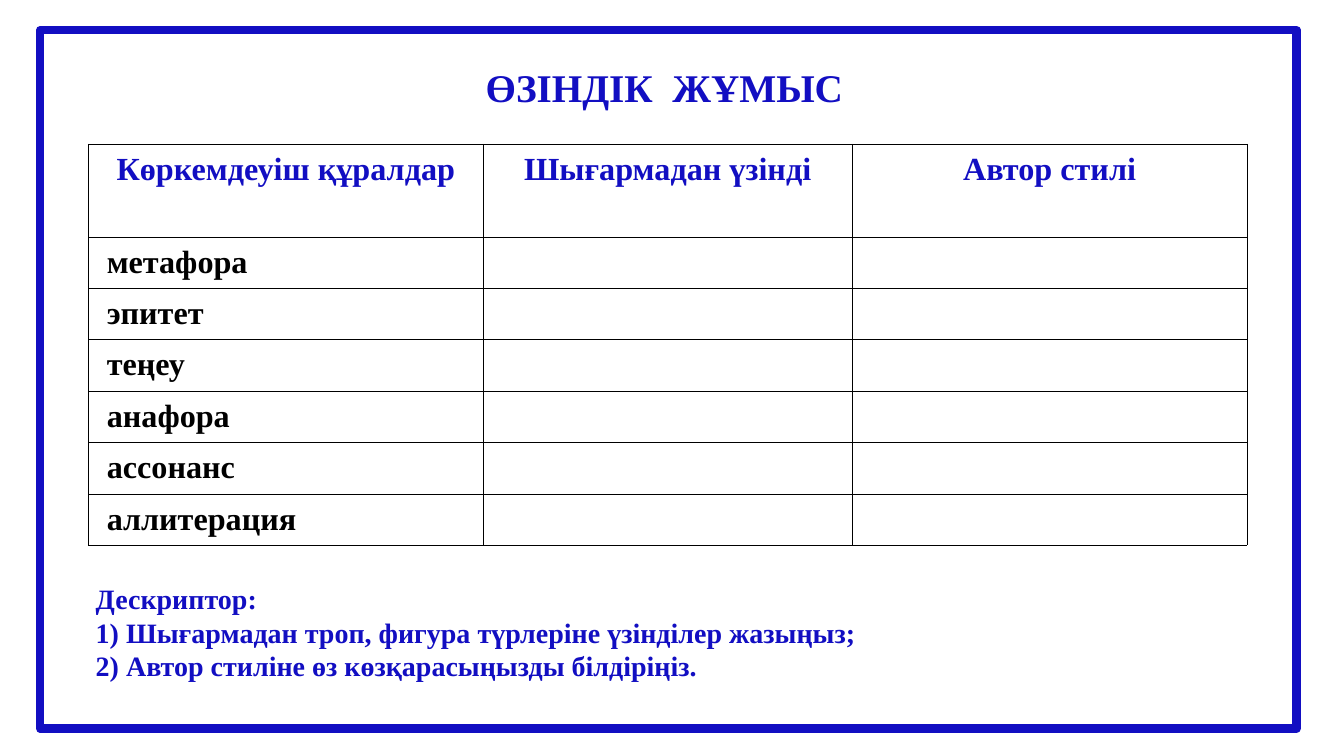
from dataclasses import dataclass

from lxml import etree
from pptx import Presentation
from pptx import util as u
from pptx.dml.color import RGBColor
from pptx.enum import shapes, text
from pptx.oxml import ns


@dataclass(frozen=True)
class Theme:
    """Hold the colours and type sizes of the slide."""
    font: str = "Times New Roman"
    blue: str = "120EC2"
    black: str = "000000"
    title: int = 28
    table: int = 23
    body: int = 20
    frame_line: float = 6
    grid_line: float = 0.45


THEME = Theme()
HEADERS = ["Көркемдеуіш құралдар", "Шығармадан үзінді", "Автор стилі"]
DEVICES = ["метафора", "эпитет", "теңеу", "анафора", "ассонанс", "аллитерация"]
COLUMN_WIDTHS = [3.92, 3.66, 3.92]
HEADER_HEIGHT, ROW_HEIGHT = 0.92, 0.51
DESCRIPTOR = [
    "Дескриптор:",
    "1) Шығармадан троп, фигура түрлеріне үзінділер жазыңыз;",
    "2) Автор стиліне өз көзқарасыңызды білдіріңіз.",
]


def format_paragraph(paragraph, size, color, alignment=text.PP_ALIGN.LEFT, spacing=1.0):
    """Apply alignment, spacing and the bold theme font to a paragraph."""
    paragraph.alignment = alignment
    paragraph.line_spacing = spacing
    paragraph.space_before = paragraph.space_after = u.Pt(0)
    for run in paragraph.runs:
        run.font.name = THEME.font
        run.font.size = u.Pt(size)
        run.font.bold = True
        run.font.color.rgb = RGBColor.from_string(color)


def place(shape, box):
    """Move a shape to a box of left, top, width and height in inches."""
    shape.left, shape.top, shape.width, shape.height = map(u.Inches, box)


def add_title(slide, box):
    """Fill the title placeholder."""
    title = slide.shapes.title
    place(title, box)
    frame = title.text_frame
    frame.text = "ӨЗІНДІК  ЖҰМЫС"
    frame.word_wrap = False
    frame.auto_size = text.MSO_AUTO_SIZE.NONE
    frame.vertical_anchor = text.MSO_ANCHOR.MIDDLE
    format_paragraph(frame.paragraphs[0], THEME.title, THEME.blue, spacing=0.9)


def add_descriptor(slide, box):
    """Fill the body placeholder with the unbulleted descriptor lines."""
    body = slide.placeholders[1]
    place(body, box)
    frame = body.text_frame
    frame.text = "\n".join(DESCRIPTOR)
    frame.word_wrap = True
    frame.auto_size = text.MSO_AUTO_SIZE.NONE
    frame.vertical_anchor = text.MSO_ANCHOR.TOP
    for paragraph in frame.paragraphs:
        format_paragraph(paragraph, THEME.body, THEME.blue)
        properties = paragraph._p.get_or_add_pPr()
        properties.set("marL", "0")
        properties.set("indent", "0")
        etree.SubElement(properties, ns.qn("a:buNone"))


def add_frame(slide, box):
    """Draw the blue border around the slide."""
    frame = slide.shapes.add_shape(shapes.MSO_SHAPE.RECTANGLE, *map(u.Inches, box))
    frame.shadow.inherit = False
    frame.fill.background()
    frame.line.color.rgb = RGBColor.from_string(THEME.blue)
    frame.line.width = u.Pt(THEME.frame_line)


def style_cell(cell):
    """Give a cell thin borders on all sides and no fill."""
    properties = cell._tc.get_or_add_tcPr()
    for side in ("lnL", "lnR", "lnT", "lnB"):
        line = etree.SubElement(properties, ns.qn(f"a:{side}"), w=str(u.Pt(THEME.grid_line)))
        fill = etree.SubElement(line, ns.qn("a:solidFill"))
        etree.SubElement(fill, ns.qn("a:srgbClr"), val=THEME.black)
    cell.fill.background()


def add_devices_table(slide, box):
    """Build the table of literary devices with two columns left to fill in."""
    rows = [HEADERS] + [[device, "", ""] for device in DEVICES]
    table = slide.shapes.add_table(len(rows), len(HEADERS), *map(u.Inches, box)).table
    table.horz_banding = False
    for column, width in zip(table.columns, COLUMN_WIDTHS):
        column.width = u.Inches(width)
    for row_index, values in enumerate(rows):
        header = row_index == 0
        table.rows[row_index].height = u.Inches(HEADER_HEIGHT if header else ROW_HEIGHT)
        color = THEME.blue if header else THEME.black
        alignment = text.PP_ALIGN.CENTER if header else text.PP_ALIGN.LEFT
        for column_index, value in enumerate(values):
            cell = table.cell(row_index, column_index)
            style_cell(cell)
            cell.text = value
            cell.margin_left = u.Inches(0.1 if header else 0.18)
            format_paragraph(cell.text_frame.paragraphs[0], THEME.table, color, alignment, 1.07)


def main():
    """Build and save the independent work slide."""
    presentation = Presentation()
    presentation.slide_width = u.Inches(13.34)
    presentation.slide_height = u.Inches(7.5)
    slide = presentation.slides.add_slide(presentation.slide_layouts[1])
    add_title(slide, (4.72, 0.62, 3.81, 0.55))
    add_descriptor(slide, (0.85, 5.72, 8.56, 1.24))
    add_frame(slide, (0.4, 0.3, 12.47, 6.93))
    add_devices_table(slide, (0.88, 1.43, 11.5, 3.98))
    presentation.save("out.pptx")


if __name__ == "__main__":
    main()
